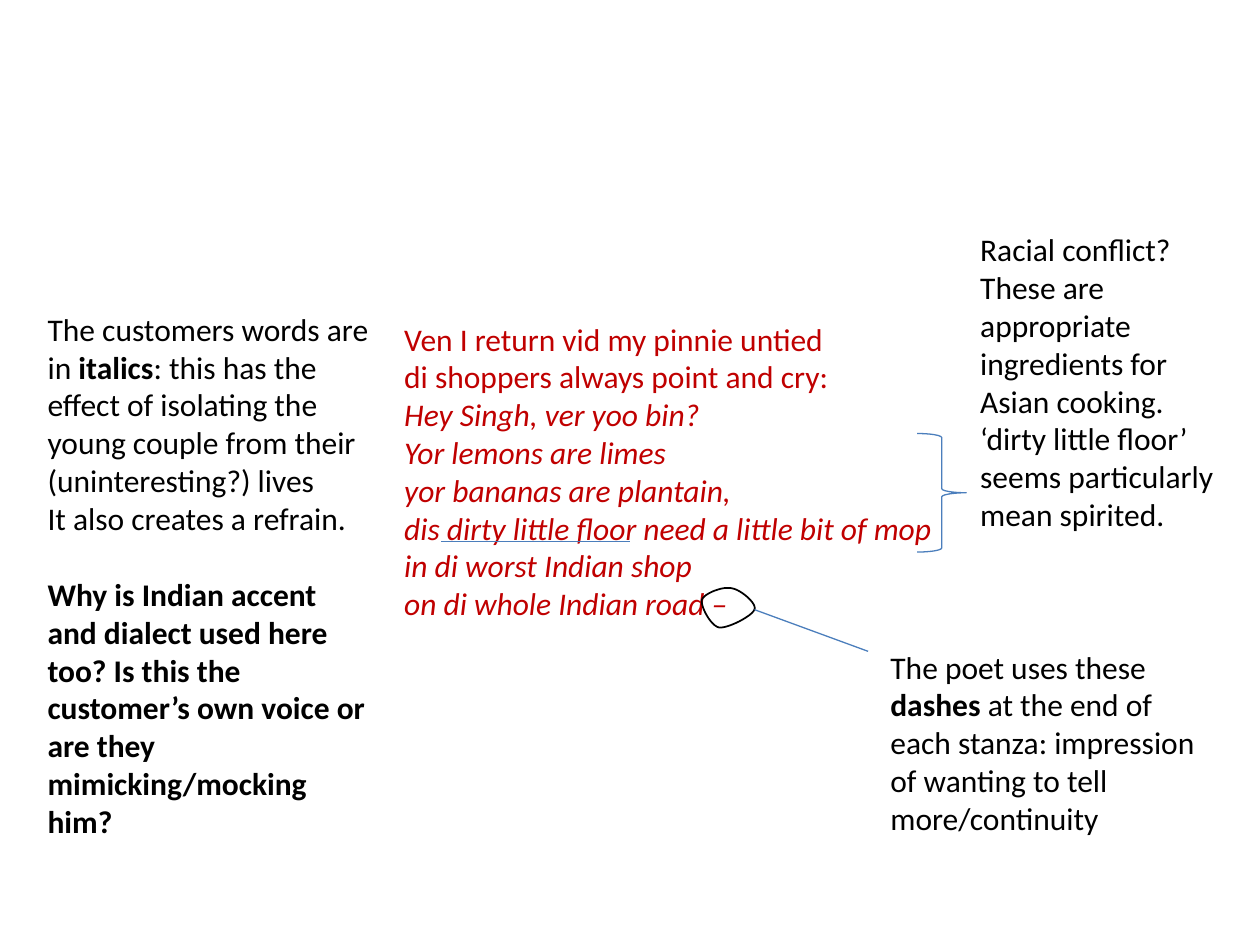
from lxml import etree
from pptx import Presentation
from pptx.dml.color import RGBColor
from pptx.enum.shapes import MSO_CONNECTOR, MSO_SHAPE
from pptx.enum.text import MSO_AUTO_SIZE
from pptx.oxml.ns import qn
from pptx.util import Cm, Pt

STRAIGHT = MSO_CONNECTOR.STRAIGHT
RIGHT_BRACE = MSO_SHAPE.RIGHT_BRACE
FIT_SHAPE = MSO_AUTO_SIZE.SHAPE_TO_FIT_TEXT

BLACK, RED, BLUE = "000000", "C00000", "4B7EBC"


def color(hex_string):
    return RGBColor.from_string(hex_string)


def add_run(p, text, font="Calibri", size=18, fill=BLACK, bold=False, italic=False):
    r = p.add_run()
    r.text = text
    r.font.name, r.font.size = font, Pt(size)
    r.font.bold, r.font.italic = bold, italic
    r.font.color.rgb = color(fill)


def curve_points(start, curves, steps=12):
    """Points along a chain of cubic Bézier curves."""
    points = [start]
    for c1, c2, end in curves:
        p0 = points[-1]
        for i in range(1, steps + 1):
            t = i / steps
            u = 1 - t
            points.append(tuple(
                u**3 * a + 3 * u * u * t * b + 3 * u * t * t * c + t**3 * d
                for a, b, c, d in zip(p0, c1, c2, end)))
    return points


class Annotator:
    """Holds the line style and the current slide."""

    def __init__(self, slide, line_color=BLUE, line_width=0.75):
        self.s = slide
        self.line_color, self.line_width = line_color, line_width

    def text(self, x, y, w, h, paragraphs, wrap=True, gap_before=None):
        """Each paragraph is a list of (text, format) runs."""
        tf = self.s.shapes.add_textbox(Cm(x), Cm(y), Cm(w), Cm(h)).text_frame
        tf.word_wrap, tf.auto_size = wrap, FIT_SHAPE
        for i, runs in enumerate(paragraphs):
            p = tf.add_paragraph() if i else tf.paragraphs[0]
            if i == gap_before:
                p.space_before = Pt(22)
            for text, fmt in runs:
                add_run(p, text, **fmt)

    def line(self, x1, y1, x2, y2):
        cn = self.s.shapes.add_connector(STRAIGHT, Cm(x1), Cm(y1), Cm(x2), Cm(y2))
        cn.line.color.rgb = color(self.line_color)
        cn.line.width = Pt(self.line_width)
        etree.SubElement(cn._element.spPr, qn("a:effectLst"))

    def outline(self, sp, line_color, width):
        sp.shadow.inherit = False
        sp.fill.background()
        sp.line.color.rgb = color(line_color)
        sp.line.width = Pt(width)

    def brace(self, x, y, w, h):
        sp = self.s.shapes.add_shape(RIGHT_BRACE, Cm(x), Cm(y), Cm(w), Cm(h))
        self.outline(sp, self.line_color, self.line_width)

    def loop(self, start, curves):
        points = [(Cm(x), Cm(y)) for x, y in curve_points(start, curves)]
        builder = self.s.shapes.build_freeform(*points[0])
        builder.add_line_segments(points[1:], close=True)
        self.outline(builder.convert_to_shape(), BLACK, 1)


def main():
    prs = Presentation()
    prs.slide_width, prs.slide_height = Cm(25.4), Cm(19.05)
    a = Annotator(prs.slides.add_slide(prs.slide_layouts[6]))
    plain, bold = {}, {"bold": True}

    # Stanza: narrator's lines upright, customers' lines in italics
    narrator = ["Ven I return vid my pinnie untied",
                "di shoppers always point and cry:"]
    customers = ["Hey Singh, ver yoo bin?",
                 "Yor lemons are limes",
                 "yor bananas are plantain,",
                 "dis dirty little floor need a little bit of mop",
                 "in di worst Indian shop",
                 "on di whole Indian road –"]
    stanza = [[(verse, {"fill": RED, "italic": verse in customers})]
              for verse in narrator + customers]
    a.text(7.9, 6.32, 11.3, 7.19, stanza, wrap=False)

    # Marks on the stanza: circled dash, underline, brace
    start = (14.76, 11.86)
    a.loop(start, [((14.58, 11.81), (14.2, 11.96), (14.15, 12.09)),
                   ((14.12, 12.22), (14.33, 12.62), (14.5, 12.65)),
                   ((14.68, 12.67), (15.16, 12.42), (15.21, 12.29)),
                   ((15.27, 12.17), (14.94, 11.89), start)])
    a.line(8.89, 10.92, 12.7, 10.92)
    a.brace(18.49, 8.74, 0.99, 2.39)

    # Note on conflict
    a.text(19.51, 4.52, 5.41, 6.4, [[
        ("Racial conflict? These are appropriate ingredients for Asian cooking. "
         "‘dirty little floor’ seems particularly mean spirited.", plain)]])

    # Note on dashes, with its leader line
    a.line(15.21, 12.29, 17.5, 13.13)
    a.text(17.7, 12.93, 7.01, 4.11, [[
        ("The poet uses these ", plain), ("dashes", bold),
        (" at the end of each stanza: impression of wanting to tell "
         "more/continuity", plain)]])

    # Note on italics and dialect
    a.text(0.71, 6.12, 7.01, 11.02, [
        [("The customers words are in ", plain), ("italics", bold),
         (": this has the effect of isolating the young couple from their "
          "(uninteresting?) lives", plain)],
        [("It also creates a refrain.", plain)],
        [("Why is Indian accent and dialect used here too? Is this the customer’s "
          "own voice or are they mimicking/mocking him?", bold)]], gap_before=2)

    prs.save("out.pptx")


if __name__ == "__main__":
    main()
